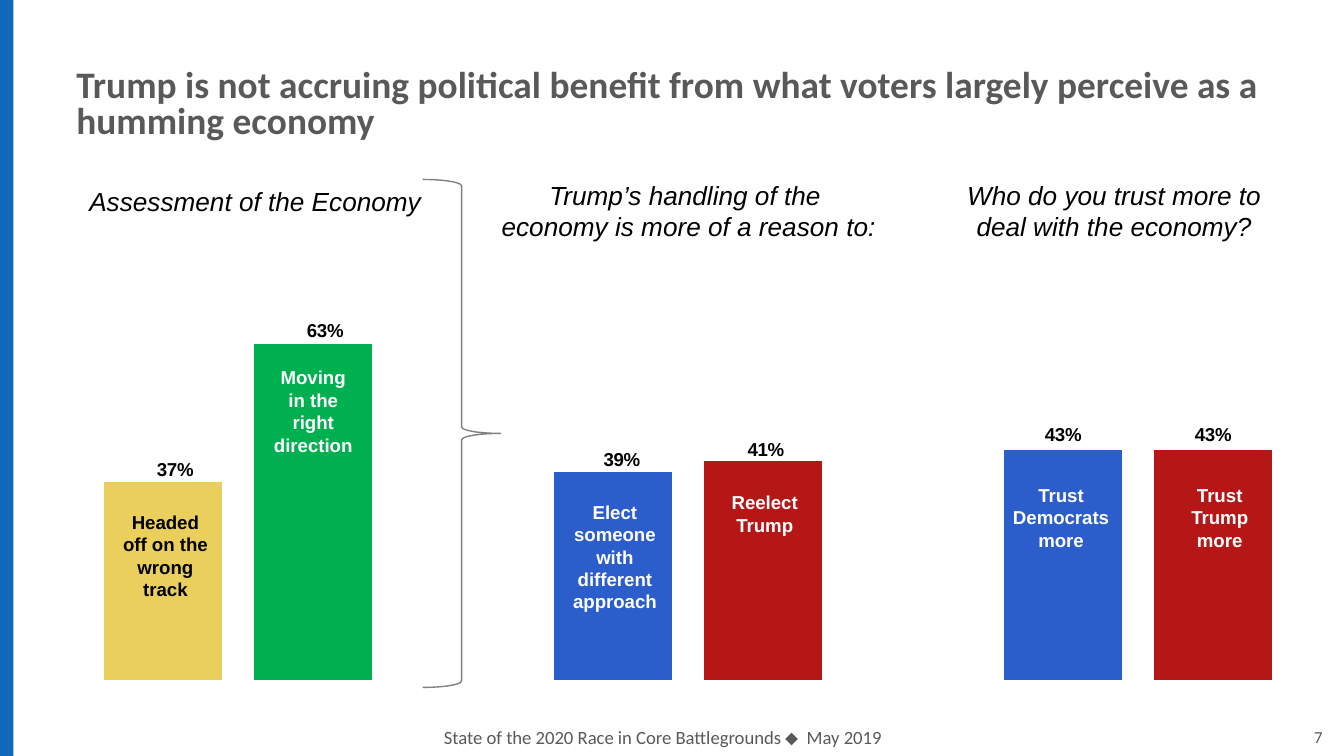
from lxml import etree
from pptx import Presentation
from pptx.chart.data import CategoryChartData
from pptx.dml.color import RGBColor
from pptx.enum.chart import XL_CHART_TYPE, XL_LABEL_POSITION
from pptx.enum.shapes import MSO_SHAPE
from pptx.enum.text import MSO_ANCHOR, PP_ALIGN
from pptx.oxml import parse_xml
from pptx.oxml.ns import nsdecls, qn
from pptx.util import Pt

PX = 4572  # 200 px to the inch
LEFT, CENTER, RIGHT = PP_ALIGN.LEFT, PP_ALIGN.CENTER, PP_ALIGN.RIGHT
TOP, MIDDLE = MSO_ANCHOR.TOP, MSO_ANCHOR.MIDDLE
COLUMNS = XL_CHART_TYPE.COLUMN_CLUSTERED
OUTSIDE_END = XL_LABEL_POSITION.OUTSIDE_END
RECTANGLE, BRACE = MSO_SHAPE.RECTANGLE, MSO_SHAPE.RIGHT_BRACE

BLACK, WHITE, GRAY = "000000", "FFFFFF", "595959"
BLUE, RED, YELLOW, GREEN = "2B5DCB", "B51717", "EACF5C", "00B050"

SHARES = [0.37, 0.63, None, 0.39, 0.41, None, 0.43, 0.43]
BAR_COLORS = {0: YELLOW, 1: GREEN, 4: RED, 7: RED}
PLOT_BOX = (49, 56, 1786, 556)  # relative to the chart
LABEL_SHIFTS = {0: (18, 5), 1: (18, 5), 3: (13, 6), 4: (4, 7)}  # by bar index

# Group box, heading box, heading, wrapping, then captions;
# inner boxes are relative to the group
QUESTIONS = [
    ((112, 257, 536, 768), (0, 9, 536, 68), "Assessment of the Economy", False, [
        ((46, 493, 176, 154), "Headed off on the wrong track", BLACK),
        ((273, 278, 162, 154), "Moving in the right direction", WHITE)]),
    ((718, 257, 614, 768), (0, 0, 614, 114),
     "Trump’s handling of the \veconomy is more of a reason to:", True, [
        ((100, 478, 194, 188), "Elect someone with different approach", WHITE),
        ((323, 464, 194, 88), "Reelect Trump", WHITE)]),
    ((1406, 257, 504, 768), (0, 0, 504, 114),
     "Who do you trust more to deal with the economy?", True, [
        ((76, 453, 194, 122), "Trust Democrats more", WHITE),
        ((312, 453, 194, 122), "Trust Trump more", WHITE)]),
]


def rgb(color):
    return RGBColor.from_string(color)


def emu(box):
    return [value * PX for value in box]


def add_text(slide, box, text, size, color, font="Arial", align=CENTER, bold=False,
             italic=False, anchor=TOP, spacing=None, wrap=True):
    frame = slide.shapes.add_textbox(*emu(box)).text_frame
    frame.word_wrap = wrap
    frame.vertical_anchor = anchor
    paragraph = frame.paragraphs[0]
    paragraph.text = text
    paragraph.alignment = align
    paragraph.line_spacing = spacing
    style = paragraph.font
    style.name, style.size = font, Pt(size)
    style.bold, style.italic = bold, italic
    style.color.rgb = rgb(color)


def add_frame(slide, width, height):
    """Side stripe, title, footer and page number."""
    stripe = slide.shapes.add_shape(RECTANGLE, *emu((0, 0, 20, height)))
    stripe.shadow.inherit = False
    stripe.fill.solid()
    stripe.fill.fore_color.rgb = rgb("1068B8")
    stripe.line.fill.background()
    add_text(slide, (94, 64, width - 186, 188),
             "Trump is not accruing political benefit from what voters "
             "largely perceive as a humming economy",
             20, GRAY, "Calibri", LEFT, bold=True, anchor=MIDDLE, spacing=0.8)
    add_text(slide, (331, height - 54, 1310, 54),
             "State of the 2020 Race in Core Battlegrounds ⬥  May 2019",
             10, GRAY, "Calibri")
    add_text(slide, (width - 140, height - 54, 128, 50), "7", 9, GRAY, "Calibri", RIGHT)


def manual_layout(chart_box, x, y, w=None, h=None):
    """Layout element: an inner plot area if a size is given, else an offset."""
    layout = parse_xml(f"<c:layout {nsdecls('c')}><c:manualLayout/></c:layout>")
    chart_width, chart_height = chart_box[2:]
    settings = [("x", x / chart_width), ("y", y / chart_height)]
    if w is not None:
        settings = [("layoutTarget", "inner"), ("xMode", "edge"), ("yMode", "edge"),
                    *settings, ("w", w / chart_width), ("h", h / chart_height)]
    for tag, value in settings:
        etree.SubElement(layout[0], qn(f"c:{tag}")).set("val", str(value))
    return layout


def style_labels(labels):
    labels.position = OUTSIDE_END
    font = labels.font
    font.name, font.size, font.bold = "Arial", Pt(10), True
    font.color.rgb = rgb(BLACK)


def add_bars(slide, box):
    data = CategoryChartData(number_format="0%")
    data.categories = [str(number) for number in range(1, len(SHARES) + 1)]
    data.add_series("Series 1", SHARES)
    chart = slide.shapes.add_chart(COLUMNS, *emu(box), data).chart
    chart.has_legend = chart.has_title = False
    chart.font.name, chart.font.size = "Arial", Pt(18)
    chart.font.color.rgb = rgb(BLACK)
    chart.category_axis.visible = chart.value_axis.visible = False
    chart.value_axis.has_major_gridlines = False
    chart.value_axis.minimum_scale, chart.value_axis.maximum_scale = 0, 0.7

    plot = chart.plots[0]
    plot.gap_width = 28
    plot.vary_by_categories = False
    bars = plot.series[0]
    bars.format.fill.solid()
    bars.format.fill.fore_color.rgb = rgb(BLUE)
    for index, color in BAR_COLORS.items():
        fill = bars.points[index].format.fill
        fill.solid()
        fill.fore_color.rgb = rgb(color)

    labels = bars.data_labels
    labels.show_value = True
    labels.number_format, labels.number_format_is_linked = "0%", False
    style_labels(labels)
    for index in LABEL_SHIFTS:
        style_labels(bars.points[index].data_label)
    for label in labels._element.findall(qn("c:dLbl")):
        index = label.find(qn("c:idx"))
        index.addnext(manual_layout(box, *LABEL_SHIFTS[int(index.get("val"))]))

    plot_area = chart._chartSpace.chart.plotArea
    for default in plot_area.findall(qn("c:layout")):
        plot_area.remove(default)
    plot_area.insert(0, manual_layout(box, *PLOT_BOX))


def add_question(slide, box, heading_box, heading, wrap, captions):
    left, top = box[:2]

    def inside(part):
        return left + part[0], top + part[1], part[2], part[3]

    add_text(slide, inside(heading_box), heading, 14, BLACK, italic=True, wrap=wrap)
    for caption_box, caption, color in captions:
        add_text(slide, inside(caption_box), caption, 10, color, bold=True)


def add_brace(slide, box):
    brace = slide.shapes.add_shape(BRACE, *emu(box))
    brace.shadow.inherit = False
    brace.fill.background()
    brace.line.color.rgb = rgb("808080")
    brace.line.width = Pt(0.75)


def main():
    width, height = 2000, 1125
    deck = Presentation()
    deck.slide_width, deck.slide_height = emu((width, height))
    slide = deck.slides.add_slide(deck.slide_layouts[6])
    add_frame(slide, width, height)
    add_bars(slide, (82, 400, 1886, 678))
    add_brace(slide, (629, 267, 116, 756))
    for question in QUESTIONS:
        add_question(slide, *question)
    deck.save("out.pptx")


if __name__ == "__main__":
    main()
